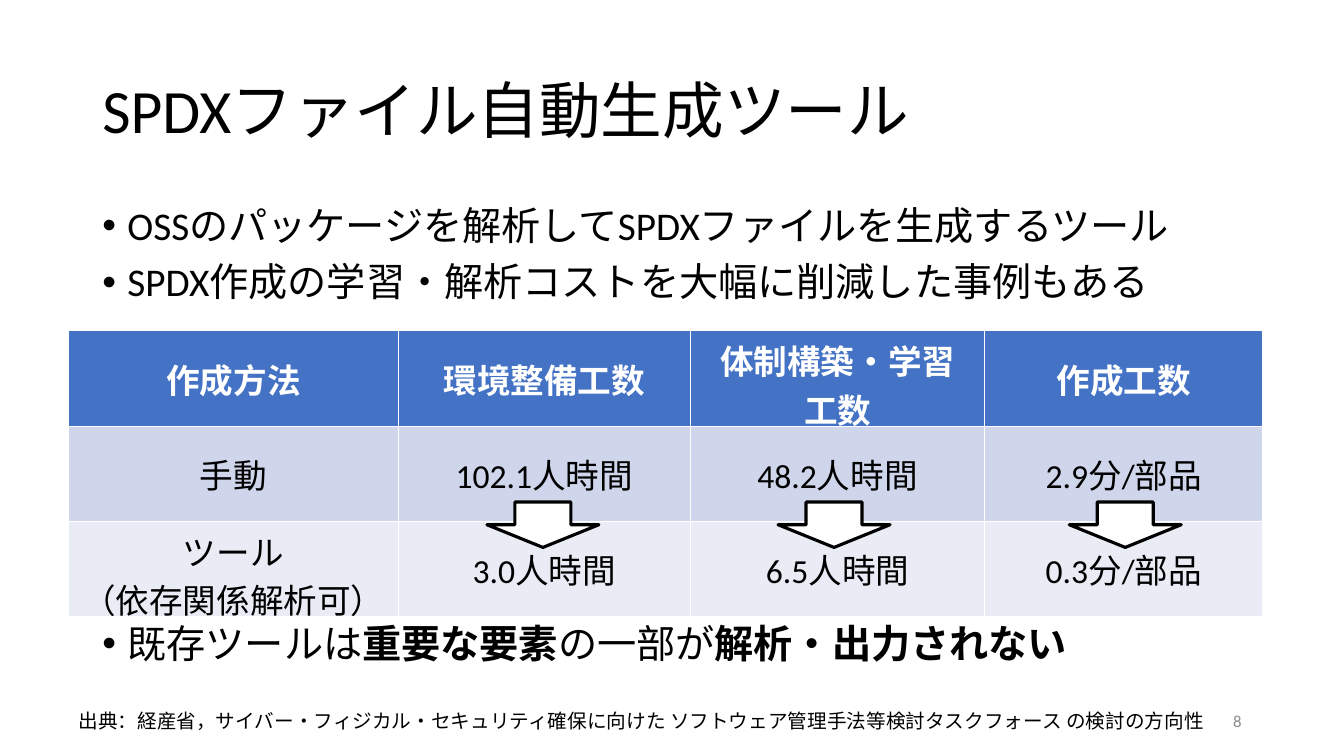
from dataclasses import dataclass
from typing import NamedTuple

from lxml.etree import SubElement
from pptx import Presentation
from pptx.dml.color import RGBColor
from pptx.enum.shapes import MSO_SHAPE
from pptx.enum.text import MSO_ANCHOR, PP_ALIGN
from pptx.oxml.ns import qn
from pptx.util import Pt


@dataclass(frozen=True)
class Theme:
    font: str = "Calibri"
    ink: str = "000000"
    paper: str = "FFFFFF"
    muted: str = "8C8C8C"
    head: str = "4472C4"
    odd: str = "CFD5EA"
    even: str = "E9EBF5"
    title: float = 44
    body: float = 28
    cell: float = 24
    source: float = 14
    number: float = 12


class Box(NamedTuple):
    left: float
    top: float
    width: float
    height: float

    def points(self) -> list:
        return [Pt(side) for side in self]


class Bullet(NamedTuple):
    spans: list[tuple[str, bool]]
    before: float = 10


class Row(NamedTuple):
    cells: list[str]
    height: float
    fill: str
    color: str
    bold: bool = False


THEME = Theme()
BULLETS = [
    Bullet([("OSSのパッケージを解析してSPDXファイルを生成するツール", False)]),
    Bullet([("SPDX作成の学習・解析コストを大幅に削減した事例もある", False)]),
    Bullet([("既存ツールは", False), ("重要な要素", True),
            ("の一部が", False), ("解析・出力されない", True)], before=228),
]
COLUMNS = [235.4, 208.8, 210.2, 198.8]
ROWS = [
    Row(["作成方法", "環境整備工数", "体制構築・学習 工数", "作成工数"],
        68.4, THEME.head, THEME.paper, True),
    Row(["手動", "102.1人時間", "48.2人時間", "2.9分/部品"],
        67.7, THEME.odd, THEME.ink),
    Row(["ツール\n（依存関係解析可）", "3.0人時間", "6.5人時間", "0.3分/部品"],
        68.4, THEME.even, THEME.ink),
]
ARROW = Box(347.8, 358.6, 80, 32.4)
ARROW_STEP = 208


def add_run(par, text: str, *, size: float, color: str = THEME.ink,
            bold: bool = False) -> None:
    run = par.add_run()
    run.text = text
    run.font.name = THEME.font
    run.font.size = Pt(size)
    run.font.bold = bold
    run.font.color.rgb = RGBColor.from_string(color)


def write(frame, text: str, *, align=PP_ALIGN.LEFT, spacing: float = 1,
          **style) -> None:
    """Fill a text frame, one paragraph for each line of text."""
    for index, line in enumerate(text.split("\n")):
        par = frame.add_paragraph() if index else frame.paragraphs[0]
        par.alignment = align
        par.line_spacing = spacing
        add_run(par, line, **style)


def add_frame(slide, box: Box, anchor=MSO_ANCHOR.MIDDLE, wrap: bool = True):
    frame = slide.shapes.add_textbox(*box.points()).text_frame
    frame.word_wrap = wrap
    frame.vertical_anchor = anchor
    return frame


def add_bullets(slide, box: Box, bullets: list[Bullet]) -> None:
    frame = add_frame(slide, box, MSO_ANCHOR.TOP)
    for index, bullet in enumerate(bullets):
        par = frame.add_paragraph() if index else frame.paragraphs[0]
        par.space_before = Pt(bullet.before)
        par.line_spacing = 0.9
        props = par._p.get_or_add_pPr()
        props.set("marL", str(Pt(18)))
        props.set("indent", str(-Pt(18)))
        SubElement(props, qn("a:buFont")).set("typeface", "Arial")
        SubElement(props, qn("a:buChar")).set("char", "•")
        for text, bold in bullet.spans:
            add_run(par, text, size=THEME.body, bold=bold)


def add_grid(slide, left: float, top: float) -> None:
    box = Box(left, top, sum(COLUMNS), sum(row.height for row in ROWS))
    table = slide.shapes.add_table(
        len(ROWS), len(COLUMNS), *box.points()).table
    for column, width in zip(table.columns, COLUMNS):
        column.width = Pt(width)
    for line, row in zip(table.rows, ROWS):
        line.height = Pt(row.height)
        for cell, text in zip(line.cells, row.cells):
            cell.fill.solid()
            cell.fill.fore_color.rgb = RGBColor.from_string(row.fill)
            cell.vertical_anchor = MSO_ANCHOR.MIDDLE
            write(cell.text_frame, text, align=PP_ALIGN.CENTER,
                  size=THEME.cell, color=row.color, bold=row.bold)


def add_arrow(slide, box: Box) -> None:
    arrow = slide.shapes.add_shape(MSO_SHAPE.DOWN_ARROW, *box.points())
    arrow.shadow.inherit = False
    arrow.fill.solid()
    arrow.fill.fore_color.rgb = RGBColor.from_string(THEME.paper)
    arrow.line.color.rgb = RGBColor.from_string(THEME.ink)
    arrow.line.width = Pt(2.25)


def main() -> None:
    deck = Presentation()
    deck.slide_width, deck.slide_height = Pt(960), Pt(540)
    slide = deck.slides.add_slide(deck.slide_layouts[6])
    write(add_frame(slide, Box(66, 28.8, 828, 104.4)),
          "SPDXファイル自動生成ツール", size=THEME.title, spacing=0.9)
    add_bullets(slide, Box(66, 144, 828, 378.7), BULLETS)
    write(add_frame(slide, Box(678, 500.4, 216, 28.8)), "8",
          align=PP_ALIGN.RIGHT, size=THEME.number, color=THEME.muted)
    write(add_frame(slide, Box(49, 502.6, 828.7, 24.5), MSO_ANCHOR.TOP, False),
          "出典：経産省，サイバー・フィジカル・セキュリティ確保に向けた "
          "ソフトウェア管理手法等検討タスクフォース の検討の方向性",
          size=THEME.source)
    add_grid(slide, 49, 236.2)
    for index in range(len(COLUMNS) - 1):
        add_arrow(slide, ARROW._replace(left=ARROW.left + index * ARROW_STEP))
    deck.save("out.pptx")


if __name__ == "__main__":
    main()
